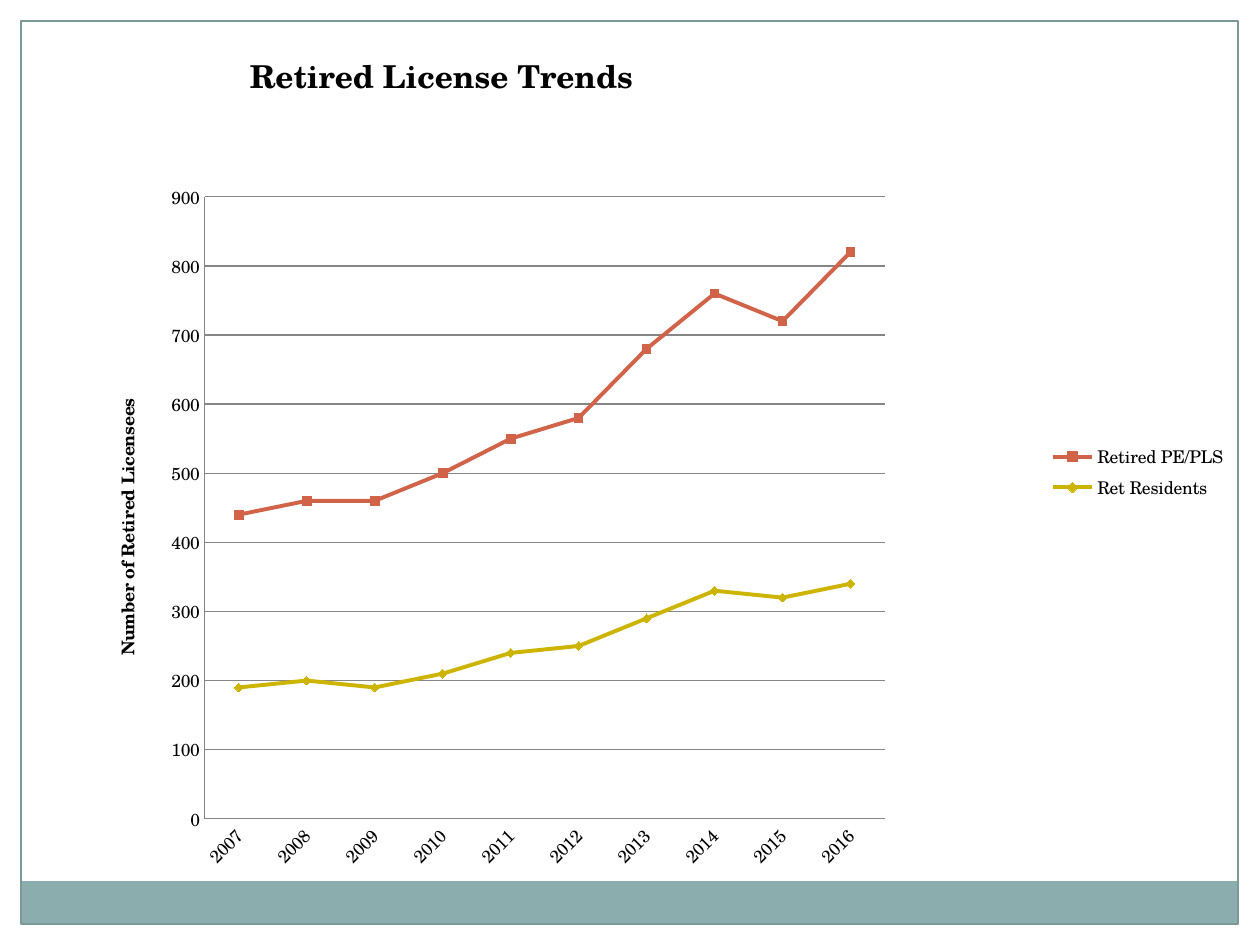
from pptx import Presentation
from pptx.chart.data import CategoryChartData
from pptx.dml.color import RGBColor
from pptx.enum.chart import XL_CHART_TYPE, XL_LEGEND_POSITION, XL_MARKER_STYLE, XL_TICK_MARK
from pptx.enum.shapes import MSO_SHAPE
from pptx.oxml import parse_xml
from pptx.oxml.ns import nsdecls, qn
from pptx.util import Pt

BLACK = RGBColor(0x00, 0x00, 0x00)
WHITE = RGBColor(0xFF, 0xFF, 0xFF)
BAND = RGBColor(0x8C, 0xAD, 0xAE)
BORDER = RGBColor(0x7C, 0x99, 0x9A)
GRID = RGBColor(0x86, 0x86, 0x86)
RED = RGBColor(0xD1, 0x63, 0x49)
GOLD = RGBColor(0xCC, 0xB4, 0x00)
FONT = "TeX Gyre Schola"
MARGIN = 12
CHART_WIDTH, CHART_HEIGHT = 696, 516
YEARS = [str(year) for year in range(2007, 2017)]
TRENDS = [
    ("Retired PE/PLS", [440, 460, 460, 500, 550, 580, 680, 760, 720, 820],
     RED, XL_MARKER_STYLE.SQUARE),
    ("Ret Residents", [190, 200, 190, 210, 240, 250, 290, 330, 320, 340],
     GOLD, XL_MARKER_STYLE.DIAMOND),
]


def add_rectangle(slide, left, top, width, height, fill=None, line=None):
    rectangle = slide.shapes.add_shape(
        MSO_SHAPE.RECTANGLE, Pt(left), Pt(top), Pt(width), Pt(height))
    rectangle.shadow.inherit = False
    if fill is None:
        rectangle.fill.background()
    else:
        rectangle.fill.solid()
        rectangle.fill.fore_color.rgb = fill
    if line is None:
        rectangle.line.fill.background()
    else:
        rectangle.line.color.rgb = line
        rectangle.line.width = Pt(0.75)


def manual_layout(parent, predecessor, left, top, width=None, height=None, inner=False):
    for old in parent.findall(qn("c:layout")):
        parent.remove(old)
    target = '<c:layoutTarget val="inner"/>' if inner else ""
    lengths = [("x", left, CHART_WIDTH), ("y", top, CHART_HEIGHT),
               ("w", width, CHART_WIDTH), ("h", height, CHART_HEIGHT)]
    settings = "".join(f'<c:{tag} val="{length / whole}"/>'
                       for tag, length, whole in lengths if length is not None)
    layout = parse_xml(f'<c:layout {nsdecls("c")}><c:manualLayout>{target}'
                       f'<c:xMode val="edge"/><c:yMode val="edge"/>{settings}'
                       f'</c:manualLayout></c:layout>')
    if predecessor is None:
        parent.insert(0, layout)
    else:
        parent.find(qn(predecessor)).addnext(layout)


def set_font(font, size, bold=False):
    font.name = FONT
    font.size = Pt(size)
    font.bold = bold
    font.color.rgb = BLACK


def set_title(title, text, size, left, top):
    title.text_frame.text = text
    set_font(title.text_frame.paragraphs[0].font, size, True)
    manual_layout(title._element, "c:tx", left, top)


def style_axes(chart):
    years, counts = chart.category_axis, chart.value_axis
    for axis in (years, counts):
        axis.major_tick_mark = XL_TICK_MARK.NONE
        axis.minor_tick_mark = XL_TICK_MARK.NONE
        axis.format.line.color.rgb = GRID
        axis.format.line.width = Pt(0.75)
        set_font(axis.tick_labels.font, 10)
    years._element.find(qn("c:txPr")).find(qn("a:bodyPr")).set("rot", "-2700000")
    counts.minimum_scale, counts.maximum_scale, counts.major_unit = 0, 900, 100
    counts.has_major_gridlines = True
    counts.major_gridlines.format.line.color.rgb = GRID
    counts.major_gridlines.format.line.width = Pt(0.75)
    set_title(counts.axis_title, "Number of Retired Licensees", 10, 50.5, 214)
    body = counts.axis_title.text_frame._txBody.find(qn("a:bodyPr"))
    body.set("rot", "-5400000")
    body.set("vert", "horz")


def style_series(series, color, marker):
    series.smooth = False
    series.format.line.color.rgb = color
    series.format.line.width = Pt(2.25)
    series.marker.style = marker
    series.marker.size = 5
    series.marker.format.fill.solid()
    series.marker.format.fill.fore_color.rgb = color
    series.marker.format.line.color.rgb = color


def add_trend_chart(slide):
    trend_data = CategoryChartData()
    trend_data.categories = YEARS
    for name, values, *_ in TRENDS:
        trend_data.add_series(name, values)
    chart = slide.shapes.add_chart(
        XL_CHART_TYPE.LINE_MARKERS, Pt(MARGIN), Pt(MARGIN),
        Pt(CHART_WIDTH), Pt(CHART_HEIGHT), trend_data).chart
    set_font(chart.font, 10)
    chart._chartSpace.find(qn("c:chart")).addnext(parse_xml(
        f'<c:spPr {nsdecls("c", "a")}><a:noFill/><a:ln><a:noFill/></a:ln></c:spPr>'))
    chart.plots[0].vary_by_categories = False
    for series, (_, _, color, marker) in zip(chart.plots[0].series, TRENDS):
        style_series(series, color, marker)
    style_axes(chart)
    set_title(chart.chart_title, "Retired License Trends", 18, 127.5, 12)
    chart.has_legend = True
    chart.legend.position = XL_LEGEND_POSITION.RIGHT
    chart.legend.include_in_layout = False
    set_font(chart.legend.font, 10)
    manual_layout(chart.legend._element, "c:legendPos", 586, 238.5, 104.5, 38.5)
    plot_area = chart._chartSpace.find(qn("c:chart")).find(qn("c:plotArea"))
    manual_layout(plot_area, None, 105, 100.5, 388.5, 355.5, inner=True)


def main():
    presentation = Presentation()
    presentation.slide_width, presentation.slide_height = Pt(720), Pt(540)
    slide = presentation.slides.add_slide(presentation.slide_layouts[6])
    add_rectangle(slide, 0, 0, 720, MARGIN, fill=WHITE)
    for edge in (720 - MARGIN, 0):
        add_rectangle(slide, edge, 0, MARGIN, 540, fill=WHITE)
    add_rectangle(slide, MARGIN, 503.5, 695.5, 24.5, fill=BAND)
    add_rectangle(slide, MARGIN, MARGIN, 695.5, 516, line=BORDER)
    add_trend_chart(slide)
    presentation.save("out.pptx")


if __name__ == "__main__":
    main()
